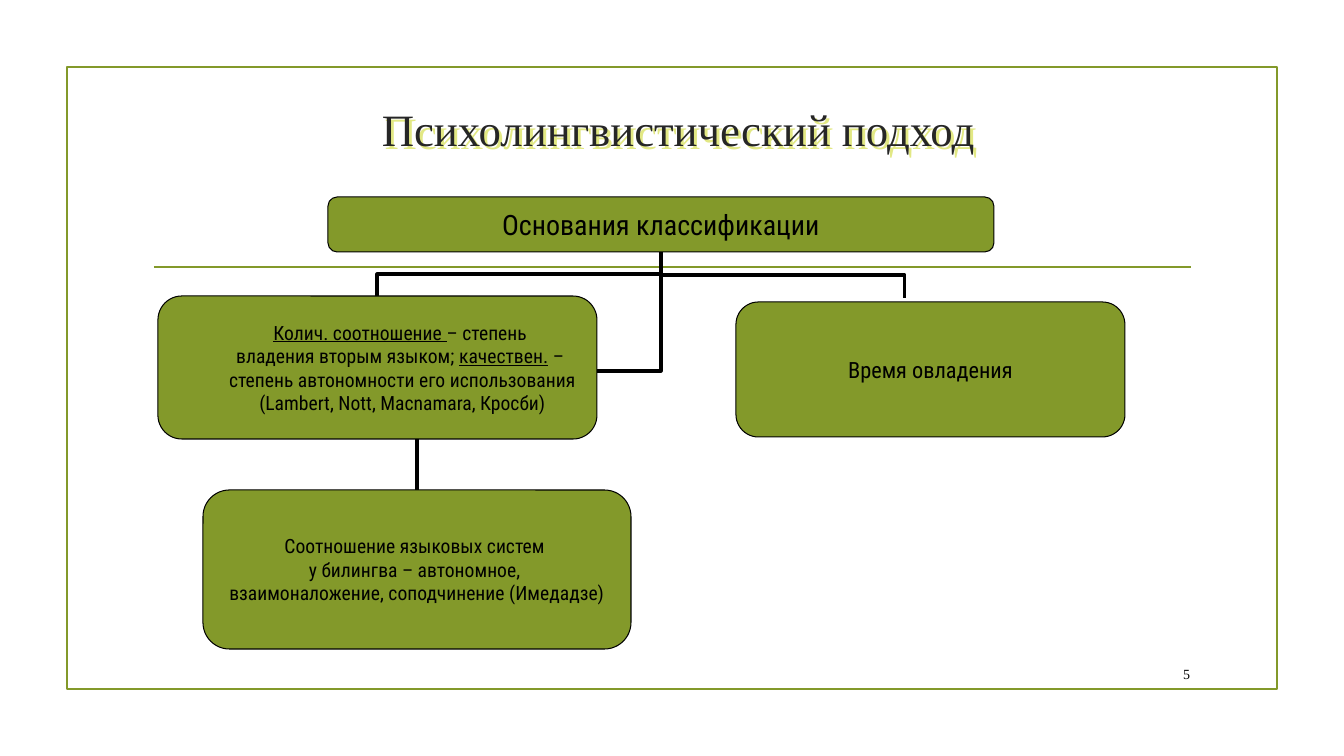
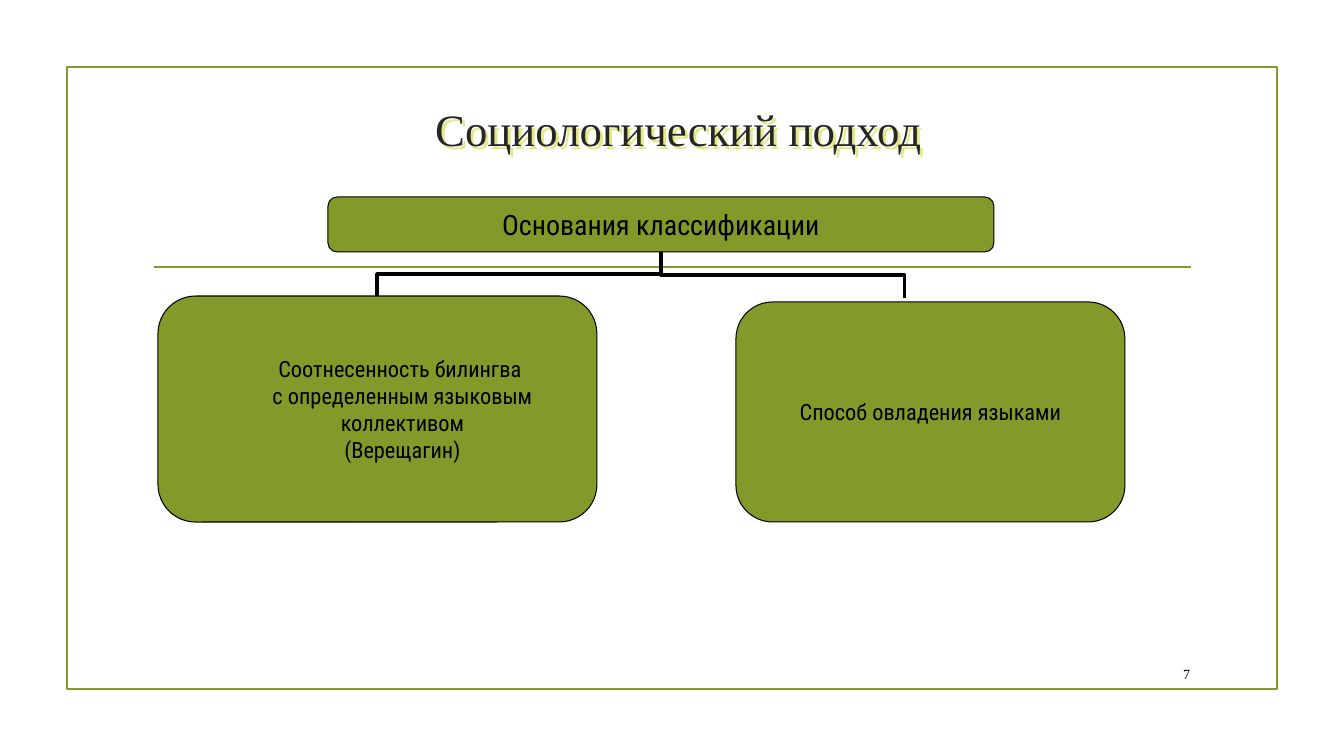
"""Build two slides that classify bilingualism by approach."""
from dataclasses import dataclass

from lxml import etree
from pptx import Presentation
from pptx.dml.color import RGBColor
from pptx.enum.shapes import MSO_CONNECTOR, MSO_SHAPE
from pptx.enum.text import MSO_ANCHOR, PP_ALIGN
from pptx.oxml.ns import qn
from pptx.util import Pt

ELBOW, STRAIGHT = MSO_CONNECTOR.ELBOW, MSO_CONNECTOR.STRAIGHT
RECT, ROUNDED = MSO_SHAPE.RECTANGLE, MSO_SHAPE.ROUNDED_RECTANGLE
MIDDLE = MSO_ANCHOR.MIDDLE
CENTER, RIGHT = PP_ALIGN.CENTER, PP_ALIGN.RIGHT
PX = 914400 / 100.8
QUARTER_TURN = "5400000"


@dataclass(frozen=True)
class Theme:
    olive: RGBColor = RGBColor.from_string("83992A")
    black: RGBColor = RGBColor.from_string("000000")
    title_color: RGBColor = RGBColor.from_string("262626")
    title_shadow: str = "E2E884"
    serif: str = "Times New Roman"
    sans: str = "Roboto Condensed"
    title: int = 32
    heading: int = 20
    body: int = 16
    detail: int = 14
    number: int = 10


THEME = Theme()
ROOT = (328, 197, 666, 55)
ROOT_X, ROOT_BOTTOM = 661, 252
LEFT_END, RIGHT_END, LOWER_END = (377, 296), (905, 298), (417, 490)

SLIDES = [
    {
        "title": "Психолингвистический подход",
        "number": "5",
        "ends": [RIGHT_END, LOWER_END, LEFT_END],
        "boxes": [
            ((158, 296, 439, 143), THEME.detail, 50, [
                "_Колич. соотношение _– степень ",
                "владения вторым языком; _качествен._ – ",
                "степень автономности его использования",
                "(Lambert, Nott, Macnamara, Кросби)",
            ]),
            ((203, 490, 428, 159), THEME.detail, 0, [
                "Соотношение языковых систем ",
                "у билингва – автономное, ",
                "взаимоналожение, соподчинение (Имедадзе)",
            ]),
            ((736, 302, 389, 135), THEME.body, 0, ["Время овладения"]),
        ],
    },
    {
        "title": "Социологический подход",
        "number": "7",
        "ends": [RIGHT_END, LEFT_END],
        "boxes": [
            ((158, 296, 439, 226), THEME.body, 50, [
                "Соотнесенность билингва ",
                "с определенным языковым",
                "коллективом",
                "(Верещагин)",
            ]),
            ((736, 302, 389, 220), THEME.body, 0, ["Способ овладения языками"]),
        ],
    },
]


def write(frame, lines, font, size, color, align, indent=0):
    frame.vertical_anchor = MIDDLE
    for index, line in enumerate(lines):
        paragraph = frame.paragraphs[0] if index == 0 else frame.add_paragraph()
        paragraph.alignment = align
        if indent:
            properties = paragraph._p.get_or_add_pPr()
            properties.set("marL", str(round(indent * PX)))
            properties.set("indent", "0")
        paragraph.font.name = font
        paragraph.font.size = Pt(size)
        paragraph.font.color.rgb = color
        for part, text in enumerate(line.split("_")):
            if text:
                run = paragraph.add_run()
                run.text = text
                if part % 2:
                    run.font.underline = True


def connect(slide, kind, ends, color, width):
    connector = slide.shapes.add_connector(kind, *(round(end * PX) for end in ends))
    connector.line.color.rgb = color
    connector.line.width = Pt(width)
    etree.SubElement(connector._element.spPr, qn("a:effectLst"))
    return connector


deck = Presentation()
deck.slide_width, deck.slide_height = round(1344 * PX), round(756 * PX)

for content in SLIDES:
    slide = deck.slides.add_slide(deck.slide_layouts[6])

    border = slide.shapes.add_shape(RECT, *(round(n * PX) for n in (67, 67, 1210, 622)))
    border.shadow.inherit = False
    border.fill.background()
    border.line.color.rgb = THEME.olive
    border.line.width = Pt(1.25)
    connect(slide, STRAIGHT, (154, 267, 1191, 267), THEME.olive, 1.25)

    number = slide.shapes.add_textbox(*(round(n * PX) for n in (1141, 658, 59, 31)))
    number.text_frame.word_wrap = True
    write(number.text_frame, [content["number"]], THEME.serif, THEME.number, THEME.black, RIGHT)

    title = slide.shapes.add_textbox(*(round(n * PX) for n in (225, 69, 907, 119)))
    title.text_frame.word_wrap = True
    write(title.text_frame, [content["title"]], THEME.serif, THEME.title, THEME.title_color, CENTER)
    effects = etree.SubElement(title._element.spPr, qn("a:effectLst"))
    shadow = etree.SubElement(effects, qn("a:outerShdw"), dist="38100", dir="2700000", algn="tl")
    etree.SubElement(shadow, qn("a:srgbClr"), val=THEME.title_shadow)

    for end_x, end_y in content["ends"]:
        middle_x, middle_y = (ROOT_X + end_x) / 2, (ROOT_BOTTOM + end_y) / 2
        half_drop, half_span = (end_y - ROOT_BOTTOM) / 2, (ROOT_X - end_x) / 2
        unturned = (middle_x - half_drop, middle_y - half_span,
                    middle_x + half_drop, middle_y + half_span)
        branch = connect(slide, ELBOW, unturned, THEME.black, 2.25)
        branch._element.spPr.find(qn("a:xfrm")).set("rot", QUARTER_TURN)

    root = (ROOT, THEME.heading, 0, ["Основания классификации"])
    for place, size, indent, lines in [root, *content["boxes"]]:
        box = slide.shapes.add_shape(ROUNDED, *(round(n * PX) for n in place))
        box.shadow.inherit = False
        box.fill.solid()
        box.fill.fore_color.rgb = THEME.olive
        box.line.color.rgb = THEME.black
        box.line.width = Pt(0.75)
        frame = box.text_frame
        frame.word_wrap = False
        frame.margin_left = frame.margin_right = round(PX)
        frame.margin_top = frame.margin_bottom = round(PX)
        write(frame, lines, THEME.sans, size, THEME.black, CENTER, indent)

deck.save("out.pptx")
